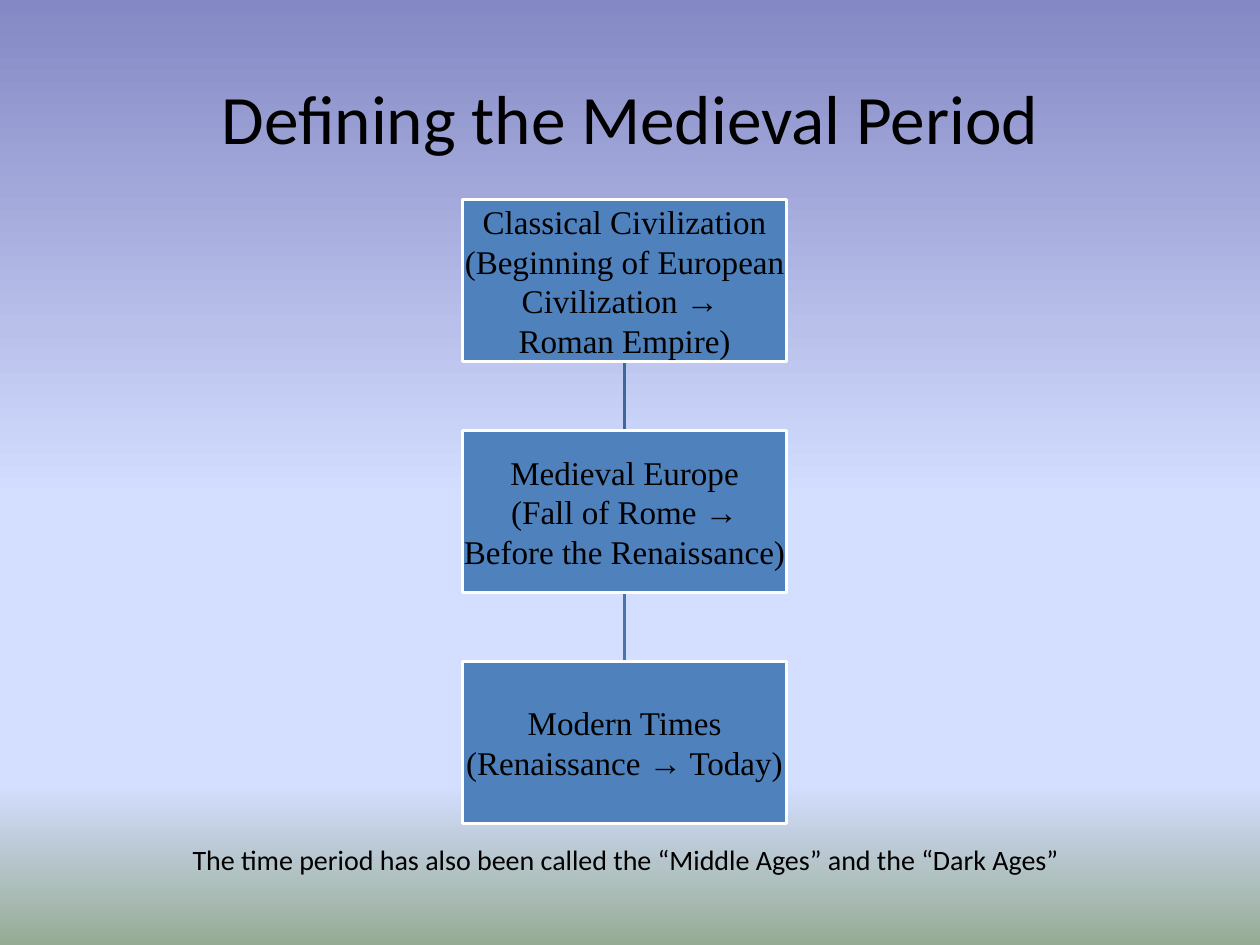
from lxml import etree
from pptx import Presentation
from pptx.dml.color import RGBColor
from pptx.enum.shapes import MSO_CONNECTOR, MSO_SHAPE
from pptx.enum.text import MSO_ANCHOR, PP_ALIGN
from pptx.oxml.ns import qn
from pptx.util import Cm, Pt

STRAIGHT = MSO_CONNECTOR.STRAIGHT
RECTANGLE = MSO_SHAPE.RECTANGLE
CENTER = PP_ALIGN.CENTER
TOP, MIDDLE = MSO_ANCHOR.TOP, MSO_ANCHOR.MIDDLE

TITLE = "Defining the Medieval Period"
NOTE = "The time period has also been called the “Middle Ages” and the “Dark Ages”"
PERIODS = [
    [["Classical Civilization", "(Beginning of European Civilization → "], ["Roman Empire)"]],
    [["Medieval Europe", "(Fall of Rome → Before the Renaissance)"]],
    [["Modern Times", "(Renaissance → Today)"]],
]
COLORS = {
    "text": "000000", "box": "4F81BD", "border": "FFFFFF",
    "sky_top": "8488C4", "sky": "D4DEFF", "ground": "96AB94",
}
LINK_COLORS = ["3F6797", "4875AC"]
BACKGROUND = [(0, "sky_top"), (53, "sky"), (83, "sky"), (100, "ground")]

SLIDE_WIDTH, SLIDE_HEIGHT = 28.22, 21.16
BOX_LEFT, BOX_TOP, BOX_WIDTH, BOX_HEIGHT = 10.36, 4.47, 7.26, 3.63
BOX_STEP = 5.17
BOX_MARGIN = 0.03


def rgb(value):
    return RGBColor.from_string(value)


def write(frame, paragraphs, font, size, anchor):
    frame.word_wrap = True
    frame.vertical_anchor = anchor
    for index, lines in enumerate(paragraphs):
        paragraph = frame.add_paragraph() if index else frame.paragraphs[0]
        paragraph.alignment = CENTER
        for number, line in enumerate(lines):
            if number:
                paragraph.add_line_break()
            run = paragraph.add_run()
            run.text = line
            run.font.name = font
            run.font.size = Pt(size)
            run.font.color.rgb = rgb(COLORS["text"])


def add_text(slide, left, top, width, height, text, size, anchor):
    box = slide.shapes.add_textbox(Cm(left), Cm(top), Cm(width), Cm(height))
    write(box.text_frame, [[text]], "Calibri", size, anchor)
    return box.text_frame


def paint_background(slide):
    fill = slide.background.fill
    fill.gradient()
    stops = slide.element.find(".//" + qn("a:gsLst"))
    for stop in list(stops):
        stops.remove(stop)
    for percent, name in BACKGROUND:
        stop = etree.SubElement(stops, qn("a:gs"), pos=str(percent * 1000))
        etree.SubElement(stop, qn("a:srgbClr"), val=COLORS[name])
    fill.gradient_angle = 270


def add_link(slide, top, color):
    middle = Cm(BOX_LEFT + BOX_WIDTH / 2)
    link = slide.shapes.add_connector(
        STRAIGHT, middle, Cm(top), middle, Cm(top + BOX_STEP - BOX_HEIGHT))
    link.line.color.rgb = rgb(color)
    link.line.width = Pt(2)
    etree.SubElement(link.element.spPr, qn("a:effectLst"))


def add_period(slide, top, paragraphs):
    box = slide.shapes.add_shape(
        RECTANGLE, Cm(BOX_LEFT), Cm(top), Cm(BOX_WIDTH), Cm(BOX_HEIGHT))
    box.shadow.inherit = False
    box.fill.solid()
    box.fill.fore_color.rgb = rgb(COLORS["box"])
    box.line.color.rgb = rgb(COLORS["border"])
    box.line.width = Pt(2)
    frame = box.text_frame
    frame.margin_left = frame.margin_right = Cm(BOX_MARGIN)
    frame.margin_top = frame.margin_bottom = Cm(BOX_MARGIN)
    write(frame, paragraphs, "Times New Roman", 21, MIDDLE)


def main():
    deck = Presentation()
    deck.slide_width, deck.slide_height = Cm(SLIDE_WIDTH), Cm(SLIDE_HEIGHT)
    slide = deck.slides.add_slide(deck.slide_layouts[6])
    paint_background(slide)
    add_text(slide, 1.42, 0.84, 25.4, 3.53, TITLE, 44, MIDDLE)
    note = add_text(slide, 2.36, 18.82, 23.29, 0.94, NOTE, 17.8, TOP)
    note.paragraphs[0].line_spacing = 0.9
    for index, color in enumerate(LINK_COLORS):
        add_link(slide, BOX_TOP + index * BOX_STEP + BOX_HEIGHT, color)
    for index, paragraphs in enumerate(PERIODS):
        add_period(slide, BOX_TOP + index * BOX_STEP, paragraphs)
    deck.save("out.pptx")


if __name__ == "__main__":
    main()
